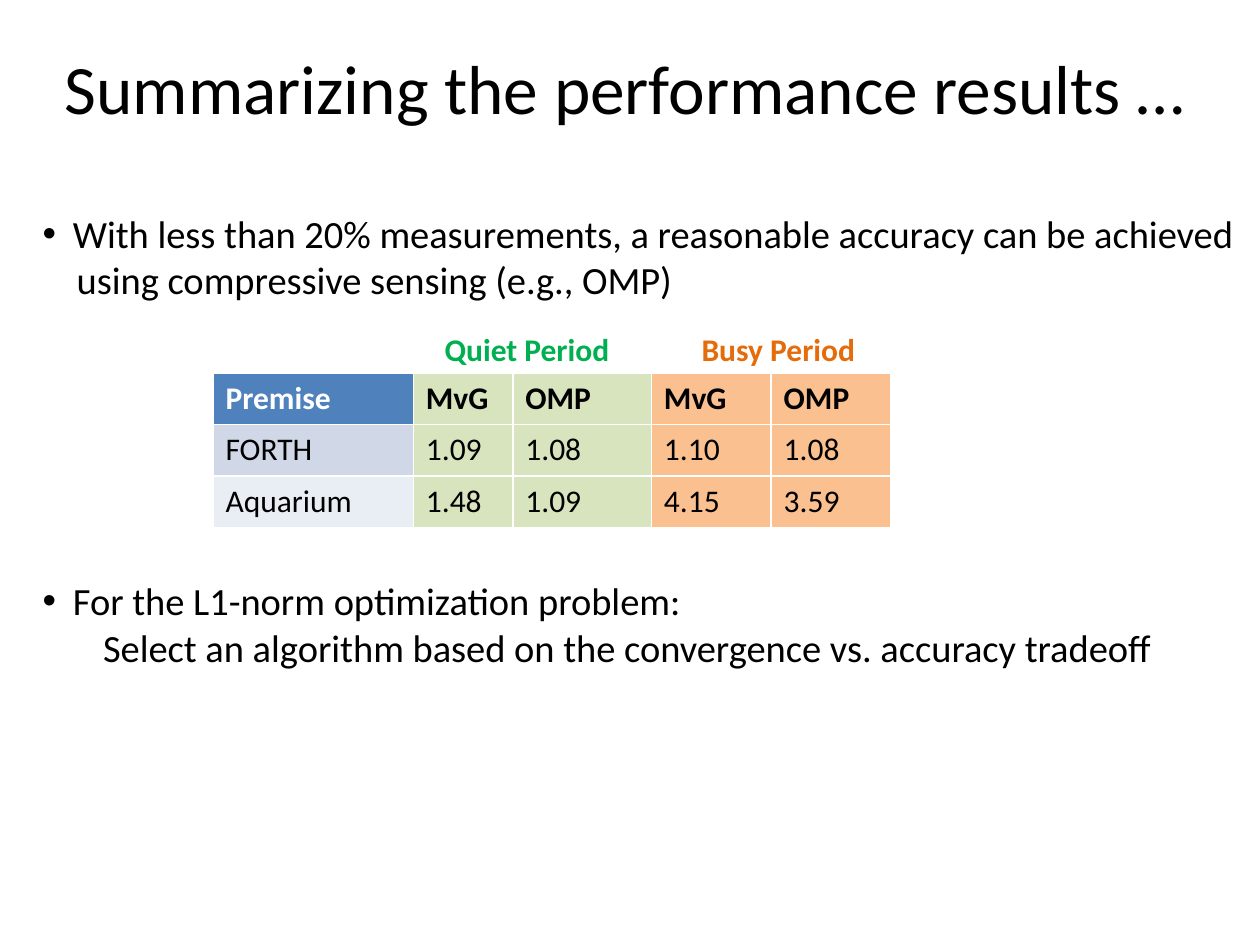
import pptx
import pptx.dml.color
import pptx.enum.text
import pptx.oxml.ns
import pptx.util
from lxml import etree

Inches = pptx.util.Inches
Pt = pptx.util.Pt
RGBColor = pptx.dml.color.RGBColor

BLACK = RGBColor(0x00, 0x00, 0x00)
WHITE = RGBColor(0xFF, 0xFF, 0xFF)
BLUE = RGBColor(0x4F, 0x81, 0xBD)
PALE_BLUE = RGBColor(0xD0, 0xD8, 0xE8)
FAINT_BLUE = RGBColor(0xE9, 0xED, 0xF4)
PALE_GREEN = RGBColor(0xD7, 0xE4, 0xBD)
PALE_ORANGE = RGBColor(0xFA, 0xC0, 0x90)
GREEN = RGBColor(0x00, 0xB0, 0x50)
ORANGE = RGBColor(0xE4, 0x6C, 0x0A)

RESULTS = [
    ["Premise", "MvG", "OMP", "MvG", "OMP"],
    ["FORTH", "1.09", "1.08", "1.10", "1.08"],
    ["Aquarium", "1.48", "1.09", "4.15", "3.59"],
]
COLUMN_WIDTHS = [1.59, 0.79, 1.1, 0.95, 0.95]
ROW_HEIGHT = 0.41
PREMISE_FILLS = [BLUE, PALE_BLUE, FAINT_BLUE]
PERIOD_FILLS = [PALE_GREEN, PALE_GREEN, PALE_ORANGE, PALE_ORANGE]

FINDINGS = [
    ("With less than 20% measurements, a reasonable accuracy can be achieved", 0.24, True, 0),
    ("using compressive sensing (e.g., OMP)", 0.27, False, 0),
    ("For the L1-norm optimization problem:", 0.24, True, 157),
    ("Select an algorithm based on the convergence vs. accuracy tradeoff", 0.48, False, 0),
]


class SlideBuilder:
    font_name = "Calibri"

    def __init__(self, presentation):
        self.slide = presentation.slides.add_slide(presentation.slide_layouts[5])

    def style(self, paragraph, size, color=BLACK, bold=False):
        font = paragraph.font
        font.name = self.font_name
        font.size = Pt(size)
        font.bold = bold
        font.color.rgb = color

    def add_title(self, text, left, top, width, height):
        title = self.slide.shapes.title
        title.left, title.top = Inches(left), Inches(top)
        title.width, title.height = Inches(width), Inches(height)
        frame = title.text_frame
        frame.text = text
        frame.margin_top = 0
        frame.vertical_anchor = pptx.enum.text.MSO_ANCHOR.TOP
        frame.paragraphs[0].alignment = pptx.enum.text.PP_ALIGN.CENTER
        self.style(frame.paragraphs[0], 39.6)

    def add_text_box(self, left, top, width, height):
        shape = self.slide.shapes.add_textbox(
            Inches(left), Inches(top), Inches(width), Inches(height))
        return shape.text_frame

    def add_label(self, text, left, top, width, height, color):
        frame = self.add_text_box(left, top, width, height)
        frame.word_wrap = False
        frame.text = text
        self.style(frame.paragraphs[0], 18, color, True)

    def add_findings(self, findings, left, top, width, height):
        frame = self.add_text_box(left, top, width, height)
        frame.word_wrap = True
        for index, (text, margin, bulleted, space_before) in enumerate(findings):
            paragraph = frame.add_paragraph() if index else frame.paragraphs[0]
            paragraph.text = text
            paragraph.space_before = Pt(space_before)
            self.style(paragraph, 22)
            self.indent(paragraph, margin, bulleted)

    def indent(self, paragraph, margin, bulleted):
        properties = paragraph._p.get_or_add_pPr()
        properties.set("marL", str(Inches(margin)))
        properties.set("indent", str(-Inches(margin) if bulleted else 0))
        if bulleted:
            tags = [("a:buFont", "typeface", "Arial"), ("a:buChar", "char", "•")]
            position = properties.index(properties.find(pptx.oxml.ns.qn("a:defRPr")))
            for offset, (tag, name, value) in enumerate(tags):
                element = etree.Element(pptx.oxml.ns.qn(tag))
                element.set(name, value)
                properties.insert(position + offset, element)

    def add_results_table(self, left, top):
        table = self.slide.shapes.add_table(
            len(RESULTS), len(COLUMN_WIDTHS), Inches(left), Inches(top),
            Inches(sum(COLUMN_WIDTHS)), Inches(ROW_HEIGHT * len(RESULTS))).table
        for column, width in zip(table.columns, COLUMN_WIDTHS):
            column.width = Inches(width)
        for row_index, values in enumerate(RESULTS):
            fills = [PREMISE_FILLS[row_index]] + PERIOD_FILLS
            for column_index, (value, fill) in enumerate(zip(values, fills)):
                cell = table.cell(row_index, column_index)
                cell.text = value
                cell.fill.solid()
                cell.fill.fore_color.rgb = fill
                color = WHITE if fill == BLUE else BLACK
                self.style(cell.text_frame.paragraphs[0], 18, color, row_index == 0)


def main():
    presentation = pptx.Presentation()
    presentation.slide_width = Inches(10)
    presentation.slide_height = Inches(7.5)
    builder = SlideBuilder(presentation)
    builder.add_title("Summarizing the performance results …", -0.59, 0.36, 11.1, 1.25)
    builder.add_findings(FINDINGS, 0.24, 1.62, 9.76, 4.54)
    builder.add_results_table(1.69, 2.96)
    builder.add_label("Quiet Period", 3.43, 2.57, 1.52, 0.4, GREEN)
    builder.add_label("Busy Period", 5.47, 2.57, 1.43, 0.4, ORANGE)
    presentation.save("out.pptx")


if __name__ == "__main__":
    main()
